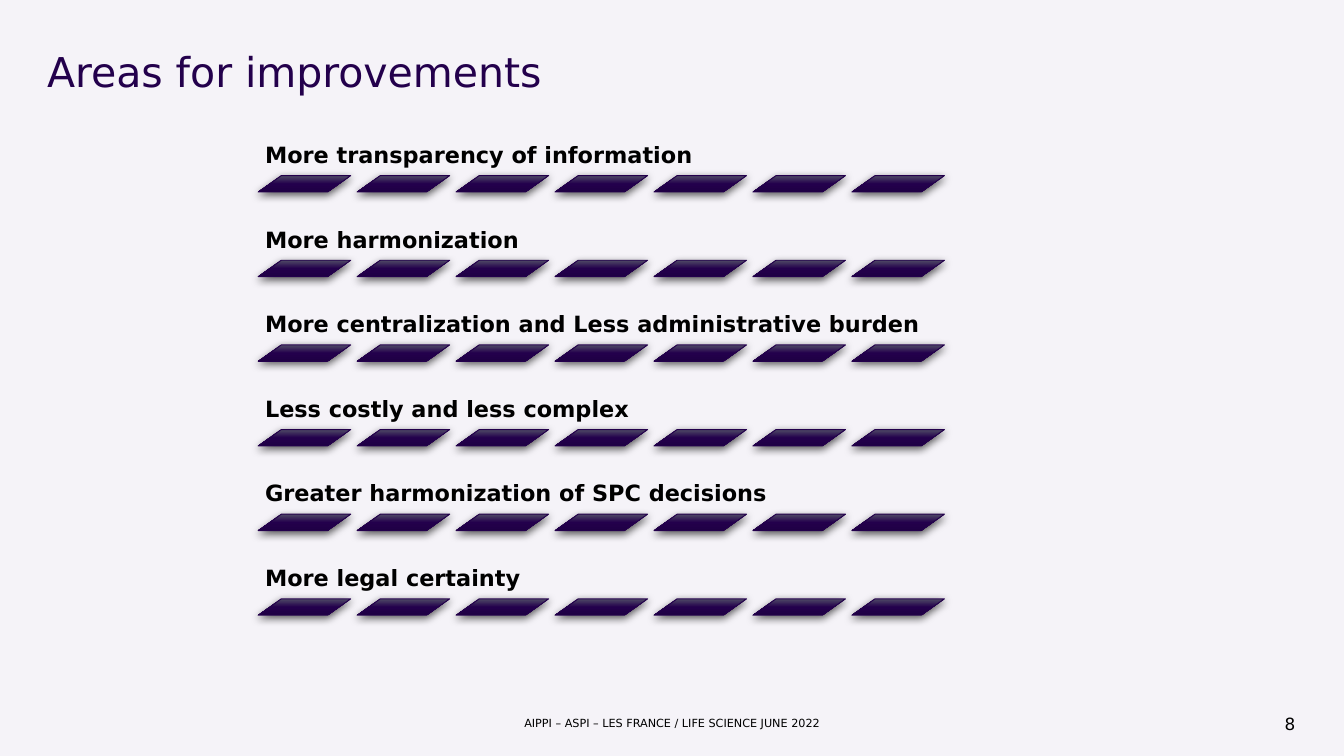
"""Build the slide listing areas for improvement above rows of slanted bars."""
from copy import deepcopy
from dataclasses import dataclass

from lxml import etree
from pptx import Presentation
from pptx.dml.color import RGBColor
from pptx.enum.shapes import MSO_SHAPE
from pptx.enum.text import MSO_ANCHOR, PP_ALIGN
from pptx.oxml.ns import qn
from pptx.slide import Slide
from pptx.util import Cm, Pt

BAR = MSO_SHAPE.PARALLELOGRAM
TOP, MIDDLE, BOTTOM = MSO_ANCHOR.TOP, MSO_ANCHOR.MIDDLE, MSO_ANCHOR.BOTTOM
LEFT, CENTER, RIGHT = PP_ALIGN.LEFT, PP_ALIGN.CENTER, PP_ALIGN.RIGHT


@dataclass(frozen=True)
class Theme:
    font: str = "DejaVu Sans"
    background: str = "F5F3F8"
    text: str = "000000"
    accent: str = "23004C"
    bar_stops: tuple[str, ...] = ("504B66", "23004C", "1F0044")
    title_size: float = 22
    label_size: float = 12
    number_size: float = 9
    footer_size: float = 6


@dataclass(frozen=True)
class Label:
    text: str
    left: float
    top: float
    width: float
    height: float
    size: float
    color: str
    bold: bool = False
    inset: float = 0
    anchor: MSO_ANCHOR = MIDDLE
    align: PP_ALIGN = LEFT
    spacing: float = 1.0


THEME = Theme()
AREAS = (
    "More transparency of information",
    "More harmonization",
    "More centralization and Less administrative burden",
    "Less costly and less complex",
    "Greater harmonization of SPC decisions",
    "More legal certainty",
)
FRAME = (
    Label("AIPPI – ASPI – LES FRANCE / LIFE SCIENCE JUNE 2022", 5.97, 13.49, 13.46, 0.36,
          THEME.footer_size, THEME.text, align=CENTER),
    Label("8", 23.16, 13.39, 1.32, 0.58, THEME.number_size, THEME.text, align=RIGHT),
    Label("Areas for improvements", 0.89, 0.99, 23.57, 1.55,
          THEME.title_size, THEME.accent, anchor=TOP, spacing=0.9),
)
BARS_PER_ROW = 7
ROW_LEFT, LABEL_TOP, BAR_TOP = 4.88, 2.11, 3.32
ROW_PITCH, BAR_PITCH = 1.6, 1.87
LABEL_WIDTH, LABEL_HEIGHT = 13.23, 1.2
BAR_WIDTH, BAR_HEIGHT, BAR_SLANT = 1.75, 0.31, 1.41


def add_label(slide: Slide, label: Label) -> None:
    s = slide.shapes.add_textbox(
        Cm(label.left), Cm(label.top), Cm(label.width), Cm(label.height))
    tf = s.text_frame
    tf.word_wrap = True
    tf.vertical_anchor = label.anchor
    tf.margin_left = tf.margin_right = tf.margin_top = tf.margin_bottom = Cm(label.inset)
    p = tf.paragraphs[0]
    p.alignment = label.align
    p.line_spacing = label.spacing
    r = p.add_run()
    r.text = label.text
    r.font.name = THEME.font
    r.font.size = Pt(label.size)
    r.font.bold = label.bold
    r.font.color.rgb = RGBColor.from_string(label.color)


def add_bar(slide: Slide, left: float, top: float) -> None:
    s = slide.shapes.add_shape(BAR, Cm(left), Cm(top), Cm(BAR_WIDTH), Cm(BAR_HEIGHT))
    s.adjustments[0] = BAR_SLANT
    s.line.color.rgb = RGBColor.from_string(THEME.accent)
    s.line.width = Pt(0.5)
    s.fill.gradient()
    s.fill.gradient_angle = 270
    first = s._element.spPr.find(".//" + qn("a:gs"))
    first.addnext(deepcopy(first))
    for stop, position, color in zip(s.fill.gradient_stops, (0, 0.5, 1), THEME.bar_stops):
        stop.position = position
        stop.color.rgb = RGBColor.from_string(color)
    s.shadow.inherit = False
    effects = s._element.spPr.find(qn("a:effectLst"))
    shadow = etree.SubElement(
        effects, qn("a:outerShdw"), blurRad=str(Pt(4.5)), dist=str(Pt(1.5)),
        dir="5400000", algn="ctr", rotWithShape="0")
    shade = etree.SubElement(shadow, qn("a:srgbClr"), val=THEME.text)
    etree.SubElement(shade, qn("a:alpha"), val="63000")


def add_area(slide: Slide, row: int, text: str) -> None:
    offset = row * ROW_PITCH
    add_label(slide, Label(
        text, ROW_LEFT, LABEL_TOP + offset, LABEL_WIDTH, LABEL_HEIGHT, THEME.label_size,
        THEME.text, bold=True, inset=0.13, anchor=BOTTOM, spacing=0.9))
    for column in range(BARS_PER_ROW):
        add_bar(slide, ROW_LEFT + column * BAR_PITCH, BAR_TOP + offset)


def main() -> None:
    prs = Presentation()
    prs.slide_width, prs.slide_height = Cm(25.4), Cm(14.29)
    slide = prs.slides.add_slide(prs.slide_layouts[6])
    fill = slide.background.fill
    fill.solid()
    fill.fore_color.rgb = RGBColor.from_string(THEME.background)
    for label in FRAME:
        add_label(slide, label)
    for row, text in enumerate(AREAS):
        add_area(slide, row, text)
    prs.save("out.pptx")


if __name__ == "__main__":
    main()
